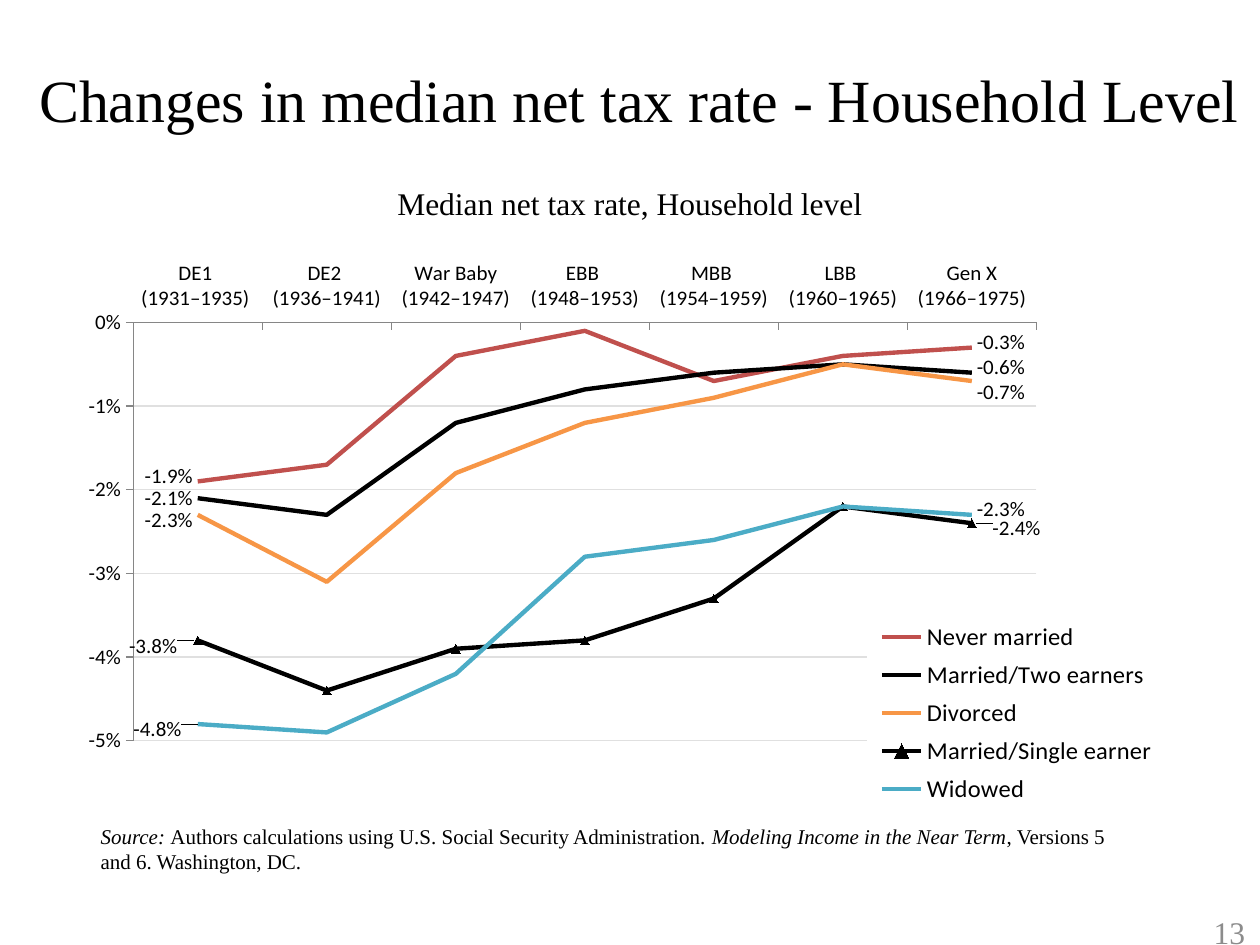
"""Build the slide on changes in the median net tax rate of households."""
from lxml.etree import SubElement
from pptx import Presentation
from pptx.chart.data import CategoryChartData
from pptx.dml.color import RGBColor
from pptx.enum.chart import XL_CHART_TYPE as ChartType, XL_LABEL_POSITION as LabelPos
from pptx.enum.chart import XL_LEGEND_POSITION as LegendPos, XL_MARKER_STYLE as Marker
from pptx.enum.chart import XL_TICK_LABEL_POSITION as TickLabels, XL_TICK_MARK as Tick
from pptx.enum.text import MSO_ANCHOR as Anchor, PP_ALIGN as Align
from pptx.oxml import parse_xml
from pptx.oxml.ns import nsdecls, qn
from pptx.util import Cm, Pt

BLACK = RGBColor(0x00, 0x00, 0x00)
GRAY = RGBColor(0x8C, 0x8C, 0x8C)
AXIS_GRAY = RGBColor(0x86, 0x86, 0x86)
GRID_GRAY = RGBColor(0xE0, 0xE0, 0xE0)
RED = RGBColor(0xC0, 0x50, 0x4D)
ORANGE = RGBColor(0xF7, 0x96, 0x46)
TEAL = RGBColor(0x4B, 0xAC, 0xC6)

prs = Presentation()
prs.slide_width, prs.slide_height = Cm(25.4), Cm(19.05)
slide = prs.slides.add_slide(prs.slide_layouts[6])


def add_text(box, lines, size, color=BLACK, align=Align.LEFT, anchor=Anchor.TOP):
    frame = slide.shapes.add_textbox(*(Cm(length) for length in box)).text_frame
    frame.word_wrap = True
    frame.vertical_anchor = anchor
    paragraph = frame.paragraphs[0]
    paragraph.alignment = align
    for number, line in enumerate(lines):
        if number:
            paragraph.add_line_break()
        for text, italic in line:
            run = paragraph.add_run()
            run.text = text
            run.font.name = "Times New Roman"
            run.font.size = Pt(size)
            run.font.italic = italic
            run.font.color.rgb = color
    return frame


def add_layout(parent, index, **values):
    layout = parse_xml(f"<c:layout {nsdecls('c')}><c:manualLayout/></c:layout>")
    for tag, value in values.items():
        SubElement(layout[0], qn(f"c:{tag}")).set("val", str(value))
    parent.insert(index, layout)


title = add_text((0.38, 1.04, 25.02, 1.9),
                 [[("Changes in median net tax rate - Household Level", False)]],
                 34.2, anchor=Anchor.MIDDLE)
title.margin_left, title.margin_right = Cm(0.41), Cm(0)
add_text((20.07, 18.16, 5.28, 1.27), [[("13", False)]], 18, GRAY, Align.RIGHT, Anchor.MIDDLE)
add_text((0, 3.58, 25.4, 1.02), [[("Median net tax rate, Household level", False)]],
         18, align=Align.CENTER)
add_text((1.78, 16.48, 21.87, 1.27),
         [[("Source: ", True),
           ("Authors calculations using U.S. Social Security Administration.\u00a0", False),
           ("Modeling Income in the Near Term", True), (", Versions 5 ", False)],
          [("and 6. Washington, DC.", False)]], 12)

groups = [
    ("Never married", RED, (-1.9, -1.7, -0.4, -0.1, -0.7, -0.4, -0.3),
     (0, -0.01), (0, -0.01)),
    ("Married/Two earners ", BLACK, (-2.1, -2.3, -1.2, -0.8, -0.6, -0.5, -0.6),
     (0, 0), (0, -0.01)),
    ("Divorced ", ORANGE, (-2.3, -3.1, -1.8, -1.2, -0.9, -0.5, -0.7),
     (0, 0.01), (0, 0.02)),
    ("Married/Single earner ", BLACK, (-3.8, -4.4, -3.9, -3.8, -3.3, -2.2, -2.4),
     (-0.01, 0.01), (0.01, 0.01)),
    ("Widowed ", TEAL, (-4.8, -4.9, -4.2, -2.8, -2.6, -2.2, -2.3),
     (-0.01, 0.01), (0, -0.01)),
]
rates = CategoryChartData(number_format="0.0%")
rates.categories = ["DE1 \n(1931–1935) ", "DE2 \n(1936–1941)", "War Baby\n(1942–1947)",
                    "EBB \n(1948–1953)", "MBB \n(1954–1959)", "LBB \n(1960–1965)",
                    "Gen X\n(1966–1975)"]
for name, _, percents, *_ in groups:
    rates.add_series(name, [round(percent / 100, 3) for percent in percents])
chart = slide.shapes.add_chart(ChartType.LINE_MARKERS, Cm(1.32), Cm(5.26), Cm(22.76),
                               Cm(11.23), rates).chart
chart.has_title = False
chart.font.name = "Calibri"
chart.font.size = Pt(12)
chart.font.color.rgb = BLACK
add_layout(chart.plots[0]._element.getparent(), 0, layoutTarget="inner", xMode="edge",
           yMode="edge", x=0.06, y=0.1, w=0.8, h=0.76)

cohorts, percent_axis = chart.category_axis, chart.value_axis
cohorts.tick_label_position = TickLabels.HIGH
percent_axis.minimum_scale, percent_axis.maximum_scale = -0.05, 0
percent_axis.major_unit = 0.01
percent_axis.tick_labels.number_format = "0%"
percent_axis.tick_labels.number_format_is_linked = False
percent_axis.major_gridlines.format.line.color.rgb = GRID_GRAY
percent_axis.major_gridlines.format.line.width = Pt(0.75)
for axis in (cohorts, percent_axis):
    axis.major_tick_mark = Tick.OUTSIDE
    axis.format.line.color.rgb = AXIS_GRAY
    axis.format.line.width = Pt(0.75)

chart.plots[0].vary_by_categories = False
for series, (name, color, _, first_shift, last_shift) in zip(chart.plots[0].series, groups):
    series.smooth = False
    series.format.line.color.rgb = color
    series.format.line.width = Pt(2.5)
    series.marker.style = Marker.NONE
    if name.startswith("Married/Single"):
        series.marker.style = Marker.TRIANGLE
        series.marker.size = 5
        series.marker.format.fill.solid()
        series.marker.format.fill.fore_color.rgb = color
        series.marker.format.line.color.rgb = color
    series.data_labels.show_value = False
    ends = ((0, LabelPos.LEFT, first_shift), (6, LabelPos.RIGHT, last_shift))
    for index, side, (right, down) in ends:
        series.points[index].data_label.position = side
        label = series.data_labels._element.findall(qn("c:dLbl"))[-1]
        add_layout(label, 1, x=right, y=down)

chart.has_legend = True
legend = chart.legend
legend.position = LegendPos.RIGHT
legend.include_in_layout = True
legend.font.size = Pt(14)
add_layout(legend._element, 1, xMode="edge", yMode="edge", x=0.71, y=0.63, w=0.27, h=0.36)
for old in legend._element.findall(qn("c:layout"))[1:]:
    legend._element.remove(old)
legend._element.find(qn("c:overlay")).addnext(parse_xml(
    f'<c:spPr {nsdecls("c", "a")}><a:solidFill><a:srgbClr val="FFFFFF"/></a:solidFill></c:spPr>'))

prs.save("out.pptx")
